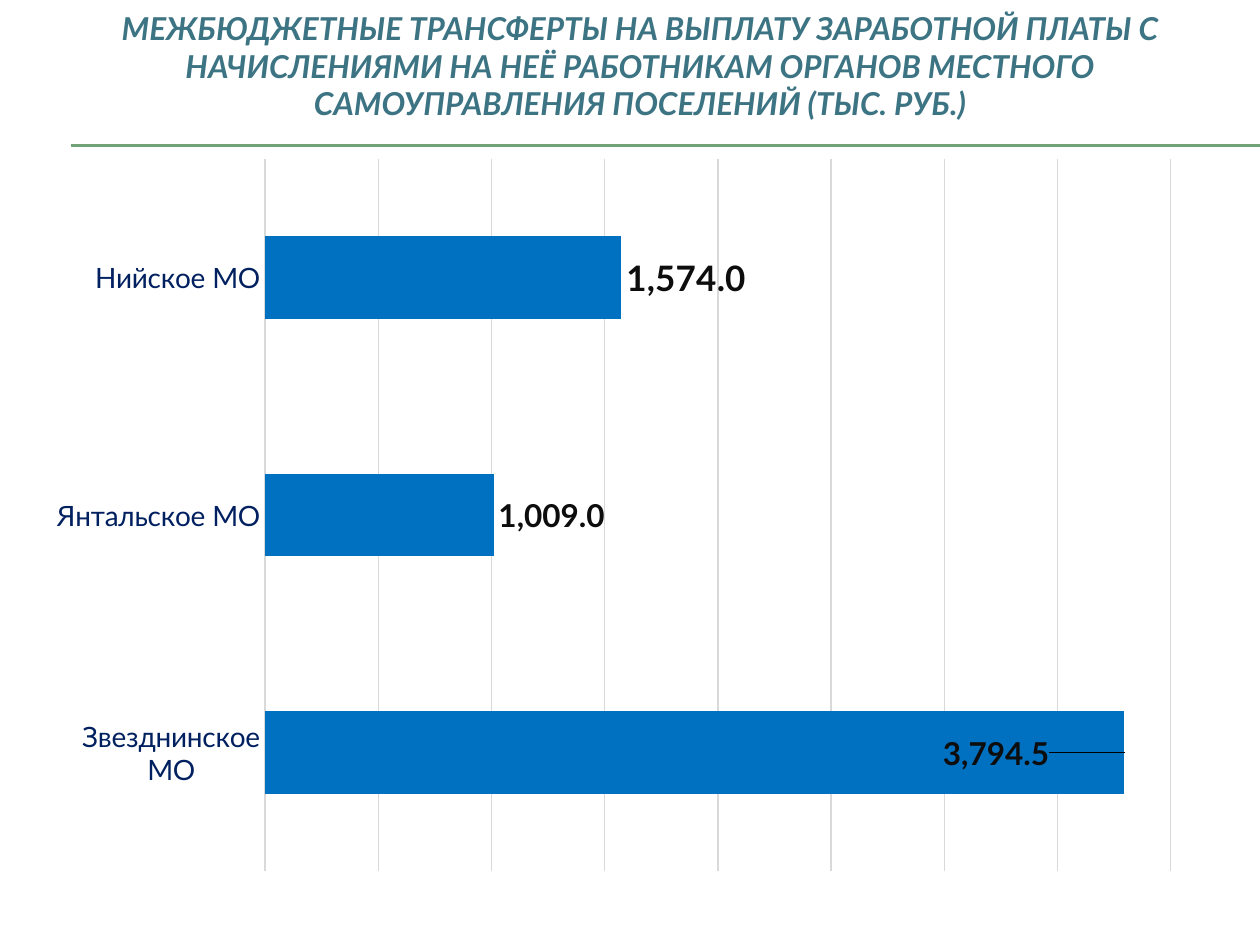
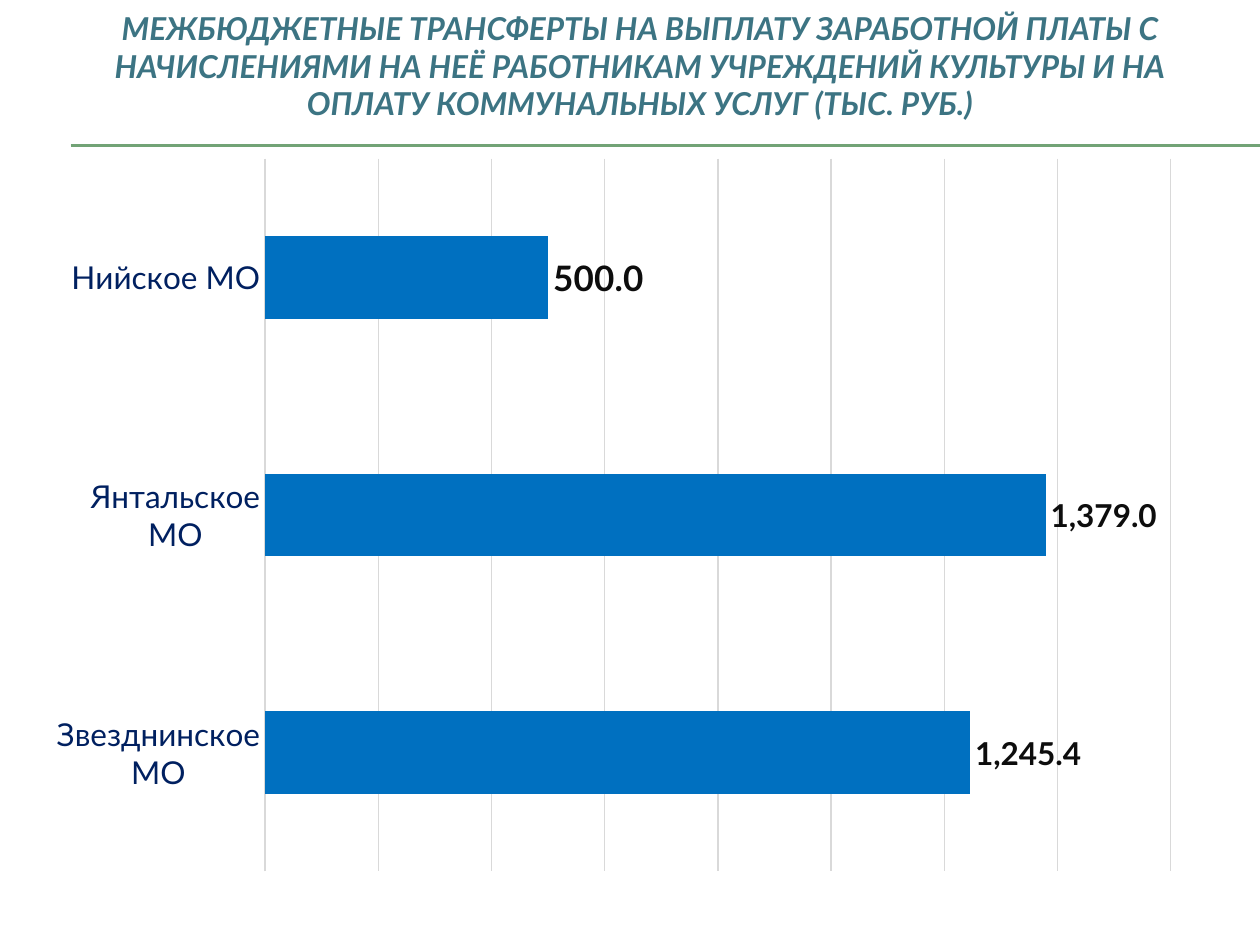
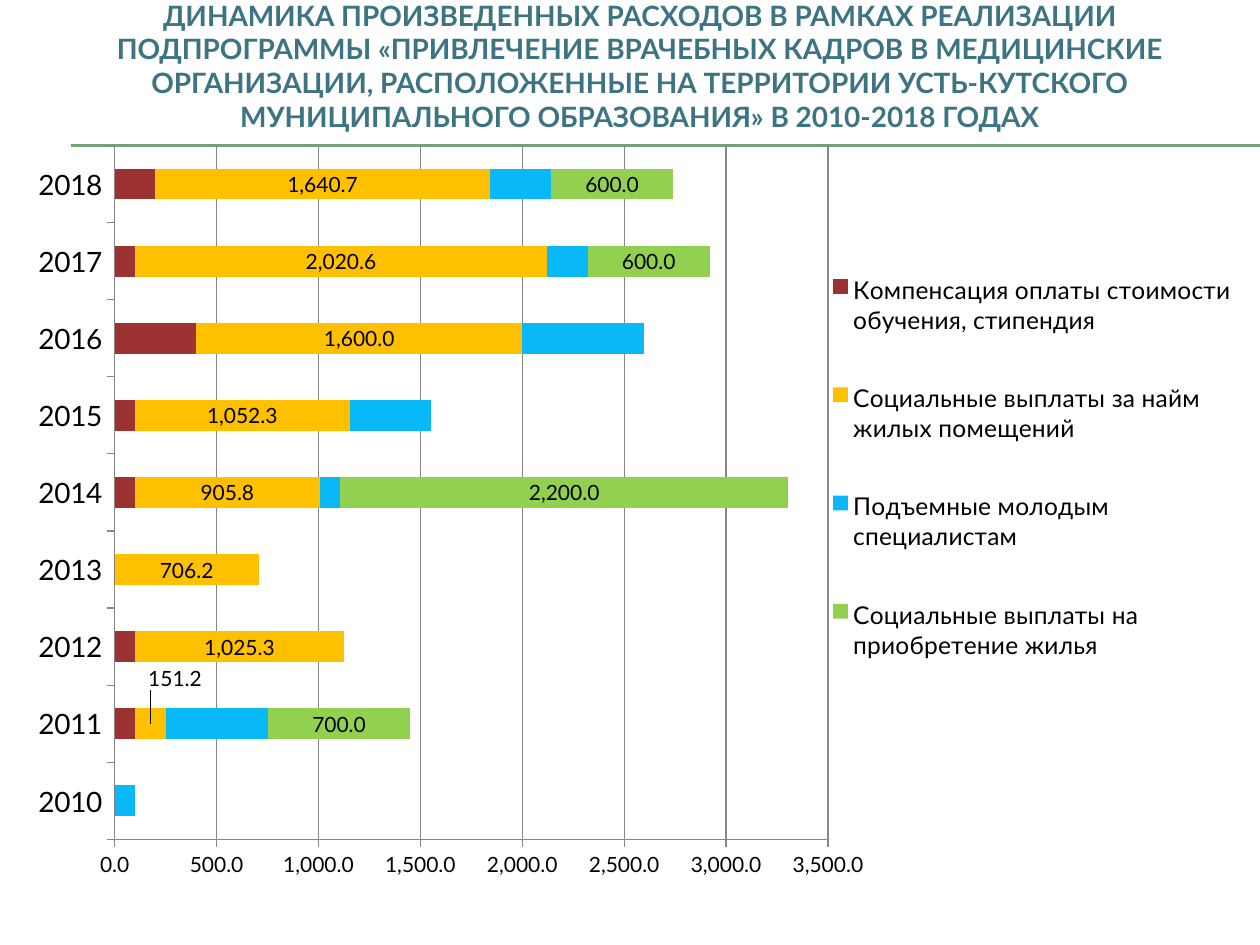
from pptx import Presentation
from pptx.chart.data import CategoryChartData
from pptx.dml.color import RGBColor
from pptx.enum.chart import (XL_CHART_TYPE, XL_LABEL_POSITION, XL_LEGEND_POSITION,
                             XL_TICK_MARK)
from pptx.enum.shapes import MSO_CONNECTOR
from pptx.enum.text import MSO_ANCHOR, PP_ALIGN
from pptx.oxml import parse_xml
from pptx.oxml.ns import nsdecls
from pptx.util import Inches, Pt

FONT = "Lato"
NUMBER_FORMAT = "#,##0.0"

BLACK = RGBColor(0x00, 0x00, 0x00)
TITLE_TEAL = RGBColor(0x3C, 0x74, 0x83)
RULE_GREEN = RGBColor(0x72, 0xA3, 0x76)
NAVY = RGBColor(0x00, 0x20, 0x60)
LABEL_BLACK = RGBColor(0x0D, 0x0D, 0x0D)
PALE_GRID = RGBColor(0xD9, 0xD9, 0xD9)
DARK_GRID = RGBColor(0x87, 0x87, 0x87)
BAR_BLUE = RGBColor(0x00, 0x70, 0xC0)
DARK_RED = RGBColor(0x9D, 0x32, 0x32)
AMBER = RGBColor(0xFF, 0xC0, 0x00)
SKY = RGBColor(0x09, 0xB9, 0xF7)
LIME = RGBColor(0x92, 0xD0, 0x50)

# Boxes: left, top, width, height in inches
TITLE_BOX = (0.33, 0.05, 9.5, 0.94)
SETTLEMENT_BOX = (0.33, 1.23, 9.24, 5.98)
DYNAMICS_BOX = (0.12, 1.07, 9.76, 6.06)

SETTLEMENTS = ["Звезднинское МО", "Янтальское МО", "Нийское МО"]
YEARS = [str(year) for year in range(2010, 2019)]

# Name, values, colour, whether values are labelled
EXPENSES = [
    ("Компенсация оплаты стоимости обучения, стипендия",
     [0, 100, 100, 0, 100, 100, 400, 100, 200], DARK_RED, False),
    ("Социальные выплаты за найм жилых помещений",
     [None, 151.2, 1025.3, 706.2, 905.8, 1052.3, 1600, 2020.6, 1640.7], AMBER, True),
    ("Подъемные молодым специалистам",
     [100, 500, 0, 0, 100, 400, 600, 200, 300], SKY, False),
    ("Социальные выплаты на приобретение жилья",
     [None, 700, 0, 0, 2200, 0, 0, 600, 600], LIME, True),
]


def set_font(font, size, color=BLACK, bold=False, italic=False):
    font.name = FONT
    font.size = Pt(size)
    font.bold = bold
    font.italic = italic
    font.color.rgb = color


def add_text(page, box, text, size, color=BLACK, bold=False, italic=False,
             align=PP_ALIGN.CENTER, anchor=MSO_ANCHOR.MIDDLE):
    frame = page.shapes.add_textbox(*map(Inches, box)).text_frame
    frame.word_wrap = True
    frame.vertical_anchor = anchor
    para = frame.paragraphs[0]
    para.alignment = align
    span = para.add_run()
    span.text = text
    set_font(span.font, size, color, bold, italic)


def add_page(deck, title, size=18, italic=True):
    """Add a page with its title and the double green rule."""
    page = deck.slides.add_slide(deck.slide_layouts[6])
    for top in (1.15, 1.16):
        rule = page.shapes.add_connector(MSO_CONNECTOR.STRAIGHT, Inches(0.56), Inches(top),
                                         Inches(10), Inches(top))
        rule.line.color.rgb = RULE_GREEN
        rule.line.width = Pt(0.75)
        rule.element.spPr.append(parse_xml(f"<a:effectLst {nsdecls('a')}/>"))
    add_text(page, TITLE_BOX, title, size, TITLE_TEAL, bold=True, italic=italic)
    return page


def manual_layout(x, y, width=None, height=None, inner=False):
    """Layout in fractions of the chart; without a size, an offset."""
    target = '<c:layoutTarget val="inner"/>' if inner else ""
    modes = size = ""
    if width is not None:
        modes = '<c:xMode val="edge"/><c:yMode val="edge"/>'
        size = f'<c:w val="{width}"/><c:h val="{height}"/>'
    return parse_xml(f'<c:layout {nsdecls("c")}><c:manualLayout>{target}{modes}'
                     f'<c:x val="{x}"/><c:y val="{y}"/>{size}</c:manualLayout></c:layout>')


def replace_layout(parent, layout, position):
    for old in parent.xpath("./c:layout"):
        parent.remove(old)
    parent.insert(position, layout)


def add_bar_chart(page, box, kind, categories, series, gap, overlap, plot_area):
    """Add a bar chart; series holds name, values and colour first."""
    data = CategoryChartData(number_format=NUMBER_FORMAT)
    data.categories = categories
    for name, values, *_ in series:
        data.add_series(name, values)
    chart = page.shapes.add_chart(kind, *map(Inches, box), data).chart
    chart.has_title = False
    chart.has_legend = False
    set_font(chart.font, 10)
    plot = chart.plots[0]
    plot.gap_width, plot.overlap = gap, overlap
    plot.vary_by_categories = False
    for bars, (_, _, color, *_) in zip(plot.series, series):
        bars.invert_if_negative = False
        bars.format.fill.solid()
        bars.format.fill.fore_color.rgb = color
    replace_layout(chart.element.xpath("./c:chart/c:plotArea")[0],
                   manual_layout(*plot_area, inner=True), 0)
    return chart


def style_axes(chart, grid_color, category_size, category_color, tick, maximum, unit):
    axis, values = chart.category_axis, chart.value_axis
    axis.major_tick_mark = values.major_tick_mark = tick
    axis.minor_tick_mark = values.minor_tick_mark = XL_TICK_MARK.NONE
    set_font(axis.tick_labels.font, category_size, category_color)
    set_font(values.tick_labels.font, 12)
    values.tick_labels.number_format = NUMBER_FORMAT
    values.tick_labels.number_format_is_linked = False
    values.minimum_scale, values.maximum_scale, values.major_unit = 0, maximum, unit
    values.has_major_gridlines = True
    for line in (axis.format.line, values.format.line, values.major_gridlines.format.line):
        line.color.rgb = grid_color
        line.width = Pt(0.75)


def show_values(bars, size, position, color=BLACK, bold=False):
    labels = bars.data_labels
    labels.show_value = True
    labels.number_format = NUMBER_FORMAT
    labels.number_format_is_linked = False
    labels.position = position
    set_font(labels.font, size, color, bold)


def point_label(chart, series_index, point_index):
    return chart.element.xpath(f"(.//c:ser)[{series_index + 1}]/c:dLbls"
                               f"/c:dLbl[c:idx/@val='{point_index}']")[0]


def settlement_page(deck, title, values, category_size, maximum, unit, label_shift=None):
    """Transfers to each settlement as single bars."""
    page = add_page(deck, title)
    chart = add_bar_chart(page, SETTLEMENT_BOX, XL_CHART_TYPE.BAR_CLUSTERED, SETTLEMENTS,
                          [("Series 1", values, BAR_BLUE)], 187, -8,
                          (0.192, 0.005, 0.778, 0.946))
    style_axes(chart, PALE_GRID, category_size, NAVY, XL_TICK_MARK.NONE, maximum, unit)
    chart.value_axis.visible = False
    bars = chart.plots[0].series[0]
    show_values(bars, 18, XL_LABEL_POSITION.OUTSIDE_END, LABEL_BLACK, bold=True)
    for index, size in ((0, 18), (2, 20)):
        label = bars.points[index].data_label
        set_font(label.font, size, LABEL_BLACK, bold=True)
        label.position = XL_LABEL_POSITION.OUTSIDE_END
    if label_shift:
        replace_layout(point_label(chart, 0, 0), manual_layout(*label_shift), 1)


def dynamics_page(deck, title):
    """Expenses by year as stacked bars with a legend."""
    page = add_page(deck, title, size=16, italic=False)
    chart = add_bar_chart(page, DYNAMICS_BOX, XL_CHART_TYPE.BAR_STACKED, YEARS, EXPENSES,
                          150, 100, (0.081, 0.014, 0.58, 0.909))
    style_axes(chart, DARK_GRID, 16, BLACK, XL_TICK_MARK.OUTSIDE, 3500, 500)

    # Legend
    chart.has_legend = True
    chart.legend.position = XL_LEGEND_POSITION.RIGHT
    chart.legend.include_in_layout = False
    set_font(chart.legend.font, 14)
    replace_layout(chart.element.xpath(".//c:legend")[0],
                   manual_layout(0.67, 0.12, 0.33, 0.63), 1)

    # Value labels
    all_bars = chart.plots[0].series
    for bars, (*_, labelled) in zip(all_bars, EXPENSES):
        if labelled:
            show_values(bars, 12, XL_LABEL_POSITION.CENTER)

    # The narrow 2011 segment carries its label above the bar
    set_font(all_bars[1].points[1].data_label.font, 12)
    replace_layout(point_label(chart, 1, 1), manual_layout(0.02, -0.06), 1)

    # Zero housing payments carry no label
    for index, value in enumerate(EXPENSES[3][1]):
        if value == 0:
            set_font(all_bars[3].points[index].data_label.font, 12)
            label = point_label(chart, 3, index)
            for part in list(label)[1:]:
                label.remove(part)
            label.append(parse_xml(f'<c:delete {nsdecls("c")} val="1"/>'))


def main():
    deck = Presentation()
    deck.slide_width, deck.slide_height = Inches(10), Inches(7.5)
    settlement_page(
        deck, "МЕЖБЮДЖЕТНЫЕ ТРАНСФЕРТЫ НА ВЫПЛАТУ ЗАРАБОТНОЙ ПЛАТЫ С НАЧИСЛЕНИЯМИ НА НЕЁ "
        "РАБОТНИКАМ ОРГАНОВ МЕСТНОГО САМОУПРАВЛЕНИЯ ПОСЕЛЕНИЙ (ТЫС. РУБ.)",
        [3794.5, 1009, 1574], 16, 4000, 500, label_shift=(-0.16, 0))
    settlement_page(
        deck, "МЕЖБЮДЖЕТНЫЕ ТРАНСФЕРТЫ НА ВЫПЛАТУ ЗАРАБОТНОЙ ПЛАТЫ С НАЧИСЛЕНИЯМИ НА НЕЁ "
        "РАБОТНИКАМ УЧРЕЖДЕНИЙ КУЛЬТУРЫ И НА ОПЛАТУ КОММУНАЛЬНЫХ УСЛУГ (ТЫС. РУБ.)",
        [1245.4, 1379, 500], 18, 1600, 200)
    dynamics_page(
        deck, "ДИНАМИКА ПРОИЗВЕДЕННЫХ РАСХОДОВ В РАМКАХ РЕАЛИЗАЦИИ ПОДПРОГРАММЫ "
        "«ПРИВЛЕЧЕНИЕ ВРАЧЕБНЫХ КАДРОВ В МЕДИЦИНСКИЕ ОРГАНИЗАЦИИ, РАСПОЛОЖЕННЫЕ НА "
        "ТЕРРИТОРИИ УСТЬ-КУТСКОГО МУНИЦИПАЛЬНОГО ОБРАЗОВАНИЯ» В 2010-2018 ГОДАХ")
    deck.save("out.pptx")


if __name__ == "__main__":
    main()
